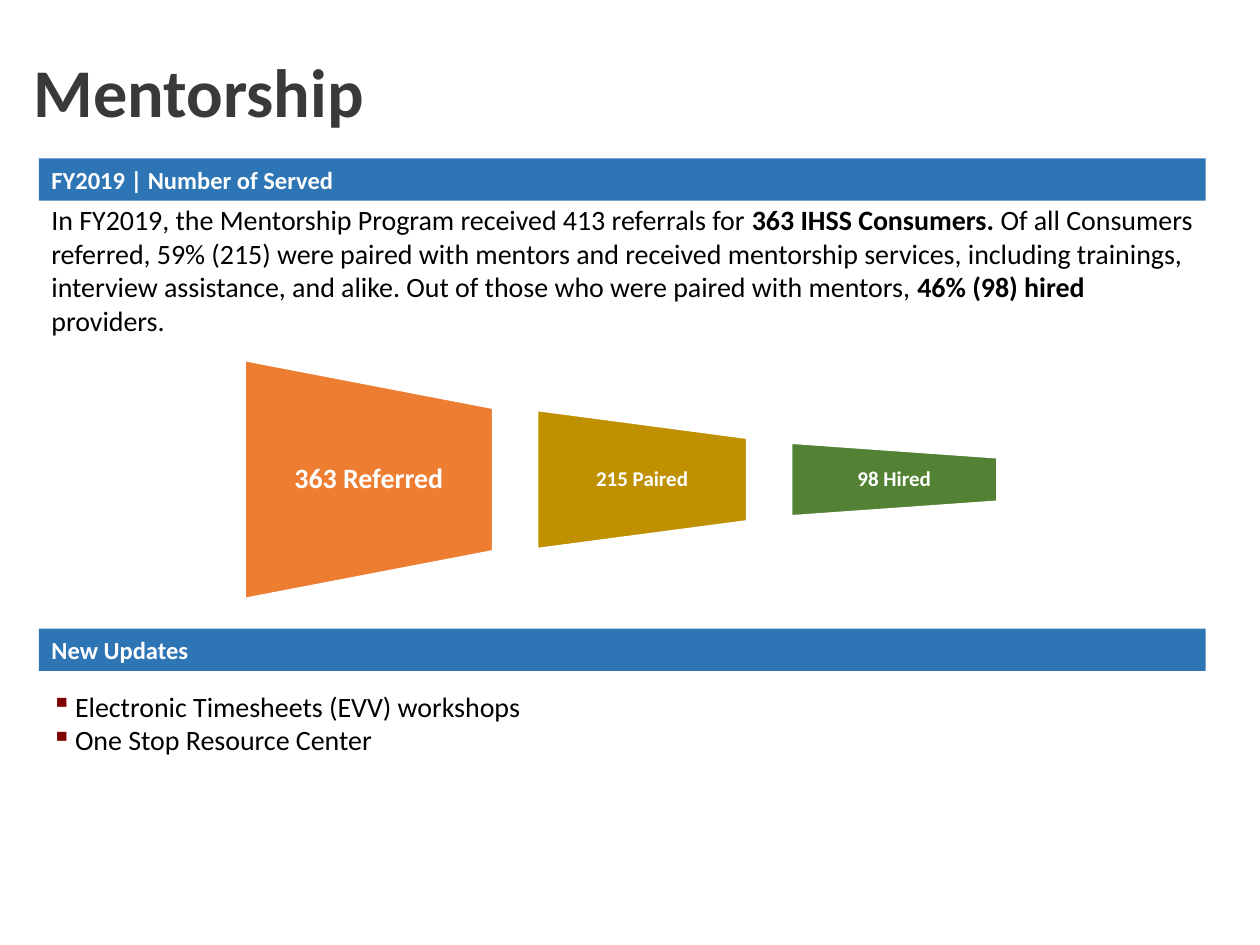
from lxml.etree import SubElement
from pptx import Presentation
from pptx.dml.color import RGBColor
from pptx.enum.shapes import MSO_SHAPE
from pptx.enum.text import MSO_ANCHOR, PP_ALIGN
from pptx.oxml.ns import qn
from pptx.util import Pt

COLORS = {
    "title": "3B3838", "text": "000000", "white": "FFFFFF", "band": "2E75B6",
    "bullet": "800000", "referred": "ED7D31", "paired": "BF9000", "hired": "548235",
}
FONT = "Calibri"
LEFT, WIDTH = 22.3, 666.7


def rgb(name):
    return RGBColor.from_string(COLORS[name])


class SlideBuilder:
    """Holds the current slide and its text and shape style."""

    def __init__(self, slide):
        self.slide = slide

    def style(self, p, size, color, bold=False):
        for r in p.runs:
            r.font.name = FONT
            r.font.size = Pt(size)
            r.font.bold = bold
            r.font.color.rgb = rgb(color)

    def shape(self, kind, x, y, w, h, fill, line=None):
        sp = self.slide.shapes.add_shape(kind, Pt(x), Pt(y), Pt(w), Pt(h))
        sp.shadow.inherit = False
        sp.fill.solid()
        sp.fill.fore_color.rgb = rgb(fill)
        if line:
            sp.line.color.rgb = rgb(line)
            sp.line.width = Pt(1)
        else:
            sp.line.fill.background()
        return sp

    def frame(self, x, y, w, h, insets=(7.2, 3.6, 7.2, 3.6), anchor=MSO_ANCHOR.TOP):
        tf = self.slide.shapes.add_textbox(Pt(x), Pt(y), Pt(w), Pt(h)).text_frame
        tf.word_wrap = True
        tf.vertical_anchor = anchor
        tf.margin_left, tf.margin_top, tf.margin_right, tf.margin_bottom = map(Pt, insets)
        return tf

    def title(self, text):
        tf = self.frame(12.2, 18.7, 684, 72, anchor=MSO_ANCHOR.MIDDLE)
        tf.text = text
        p = tf.paragraphs[0]
        p.line_spacing = 0.9
        self.style(p, 39, "title", bold=True)

    def band(self, y, text):
        tf = self.shape(MSO_SHAPE.RECTANGLE, LEFT, y, WIDTH, 24.2, "band").text_frame
        tf.text = text
        tf.word_wrap = True
        p = tf.paragraphs[0]
        p.alignment = PP_ALIGN.LEFT
        self.style(p, 14, "white", bold=True)

    def paragraph(self, y, h, parts):
        """Write (text, bold) parts as one paragraph."""
        p = self.frame(LEFT, y, WIDTH, h, (7.2, 3.6, 7.2, 7.2)).paragraphs[0]
        for text, _ in parts:
            p.add_run().text = text
        self.style(p, 16, "text")
        for r, (_, bold) in zip(p.runs, parts):
            r.font.bold = bold

    def bullets(self, y, h, items):
        tf = self.frame(LEFT, y, 673.2, h, (7.2, 3.6, 7.2, 7.2))
        tf.text = "\n".join(items)
        for p in tf.paragraphs:
            self.style(p, 16, "text")
            pPr = p._p.get_or_add_pPr()
            pPr.set("marL", str(Pt(13.5)))
            pPr.set("indent", str(-Pt(13.5)))
            color = SubElement(pPr, qn("a:buClr"))
            SubElement(color, qn("a:srgbClr"), val=COLORS["bullet"])
            SubElement(pPr, qn("a:buChar"), char="▪")

    def funnel_stage(self, x, middle, length, height, fill, text, size):
        """Draw a trapezoid narrowing to the right, with an upright label."""
        center = x + length / 2
        sp = self.shape(MSO_SHAPE.FLOWCHART_MANUAL_OPERATION, center - height / 2,
                        middle - length / 2, height, length, fill, "white")
        sp.rotation = 270
        label_h = height * 0.6
        inset = size / 2
        tf = self.frame(x, middle - label_h / 2, length, label_h,
                        (inset, 0, inset, 0), MSO_ANCHOR.MIDDLE)
        tf.text = text
        p = tf.paragraphs[0]
        p.alignment = PP_ALIGN.CENTER
        p.line_spacing = 0.9
        self.style(p, size, "white", bold=True)

    def funnel(self, x, middle, gap, stages):
        for length, *stage in stages:
            self.funnel_stage(x, middle, length, *stage)
            x += length + gap


def main():
    prs = Presentation()
    prs.slide_width, prs.slide_height = Pt(720), Pt(540)
    s = SlideBuilder(prs.slides.add_slide(prs.slide_layouts[6]))

    s.title("Mentorship")
    s.funnel(x=140, middle=274, gap=25.6, stages=[
        (141.6, 136, "referred", "363 Referred", 16),
        (119.5, 79, "paired", "215 Paired", 12),
        (117.4, 41.6, "hired", "98 Hired", 12),
    ])
    s.band(90.5, "FY2019 | Number of Served")
    s.paragraph(112.3, 86.4, [
        ("In FY2019, the Mentorship Program received 413 referrals for ", False),
        ("363 IHSS Consumers. ", True),
        ("Of all Consumers referred, 59% (215) were paired with mentors and received "
         "mentorship services, including trainings, interview assistance, and alike. "
         "Out of those who were paired with mentors, ", False),
        ("46% (98) hired ", True),
        ("providers.", False),
    ])
    s.band(359.2, "New Updates")
    s.bullets(390.3, 114.5, ["Electronic Timesheets (EVV) workshops",
                             "One Stop Resource Center"])
    prs.save("out.pptx")


if __name__ == "__main__":
    main()
